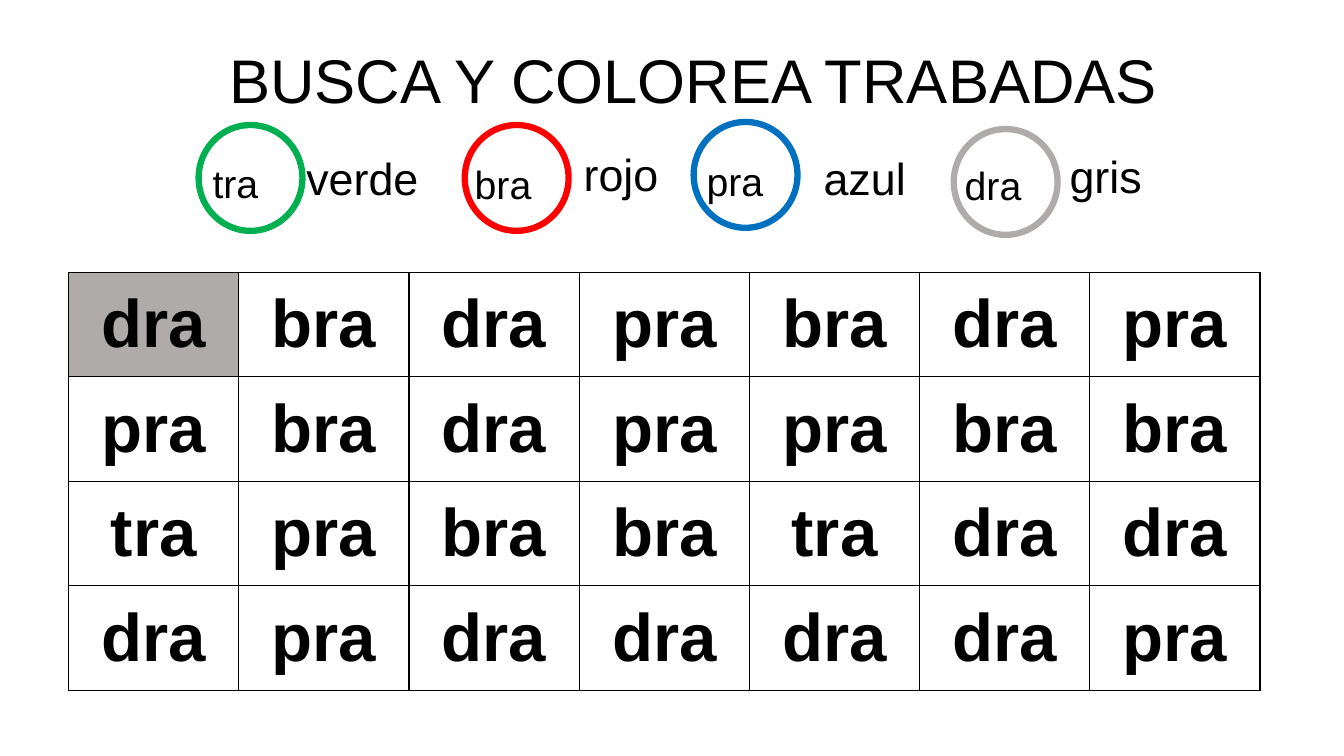
import pptx
import pptx.util
import pptx.dml.color
import pptx.enum.shapes
import pptx.enum.text
import pptx.oxml
import pptx.oxml.ns

Inches = pptx.util.Inches
Pt = pptx.util.Pt
RGBColor = pptx.dml.color.RGBColor
Align = pptx.enum.text.PP_ALIGN
Anchor = pptx.enum.text.MSO_ANCHOR

BLACK = RGBColor(0x00, 0x00, 0x00)
WHITE = RGBColor(0xFF, 0xFF, 0xFF)
GREEN = RGBColor(0x00, 0xB0, 0x50)
RED = RGBColor(0xFF, 0x00, 0x00)
BLUE = RGBColor(0x00, 0x70, 0xC0)
GRAY = RGBColor(0xAF, 0xAB, 0xAB)

TITLE = "BUSCA Y COLOREA TRABADAS"
KEYS = [
    dict(ring=(1.97, 1.24), line=GREEN, fill=None,
         part=("tra", 2.01, 1.53, 0.89), name=("verde", 2.94, 1.45, 1.7)),
    dict(ring=(4.61, 1.24), line=RED, fill=None,
         part=("bra", 4.61, 1.54, 0.96), name=("rojo", 5.69, 1.41, 1.19)),
    dict(ring=(6.88, 1.21), line=BLUE, fill=None,
         part=("pra", 6.91, 1.51, 0.96), name=("azul", 8.07, 1.45, 1.3)),
    dict(ring=(9.46, 1.28), line=GRAY, fill=WHITE,
         part=("dra", 9.47, 1.55, 0.96), name=("gris", 10.51, 1.43, 1.14)),
]
GRID = [
    "dra bra dra pra bra dra pra".split(),
    "pra bra dra pra pra bra bra".split(),
    "tra pra bra bra tra dra dra".split(),
    "dra pra dra dra dra dra pra".split(),
]
DONE = {(0, 0): GRAY}


def write(frame, text, size, bold=False, align=Align.LEFT):
    """Put one formatted line of text in a frame."""
    para = frame.paragraphs[0]
    para.alignment = align
    run = para.add_run()
    run.text = text
    font = run.font
    font.name, font.size, font.bold = "Arial", Pt(size), bold
    font.color.rgb = BLACK


def paint(fill, color):
    """Fill with a colour, or with nothing."""
    if color is None:
        fill.background()
    else:
        fill.solid()
        fill.fore_color.rgb = color


def label(slide, item, high, size):
    """Add a short text box."""
    text, left, top, wide = item
    box = slide.shapes.add_textbox(*map(Inches, (left, top, wide, high)))
    box.text_frame.word_wrap = True
    write(box.text_frame, text, size)


def add_key(slide, key):
    """Add a ring with its syllable and its colour name."""
    ring = slide.shapes.add_shape(
        pptx.enum.shapes.MSO_SHAPE.OVAL,
        *map(Inches, key["ring"]), Inches(1.03), Inches(1.05))
    ring.shadow.inherit = False
    paint(ring.fill, key["fill"])
    ring.line.color.rgb = key["line"]
    ring.line.width = Pt(4.5)
    label(slide, key["part"], 0.57, 28)
    label(slide, key["name"], 0.64, 32)


def border(cell):
    """Draw thin black lines round a cell."""
    props = cell._tc.get_or_add_tcPr()
    for spot, side in enumerate("LRTB"):
        props.insert(spot, pptx.oxml.parse_xml(
            f'<a:ln{side} {pptx.oxml.ns.nsdecls("a")} w="{Pt(1)}">'
            f'<a:solidFill><a:srgbClr val="{BLACK}"/></a:solidFill>'
            f'</a:ln{side}>'))


def add_grid(slide):
    """Add the table of syllables."""
    rows, cols = len(GRID), len(GRID[0])
    table = slide.shapes.add_table(
        rows, cols, *map(Inches, (0.68, 2.7, 11.82, 4.15))).table
    table.first_row = table.horz_banding = False
    for r, line in enumerate(GRID):
        for c, text in enumerate(line):
            cell = table.cell(r, c)
            cell.vertical_anchor = Anchor.MIDDLE
            paint(cell.fill, DONE.get((r, c)))
            border(cell)
            write(cell.text_frame, text, 48, bold=True, align=Align.CENTER)


def main():
    """Build and save the slide."""
    deck = pptx.Presentation()
    deck.slide_width, deck.slide_height = Inches(13.33), Inches(7.5)
    slide = deck.slides.add_slide(deck.slide_layouts[5])
    title = slide.shapes.title
    title.left, title.top = Inches(0.43), Inches(0.37)
    title.width, title.height = Inches(12.9), Inches(0.84)
    title.text_frame.vertical_anchor = Anchor.TOP
    write(title.text_frame, TITLE, 44, align=Align.CENTER)
    for key in KEYS:
        add_key(slide, key)
    add_grid(slide)
    deck.save("out.pptx")


if __name__ == "__main__":
    main()
